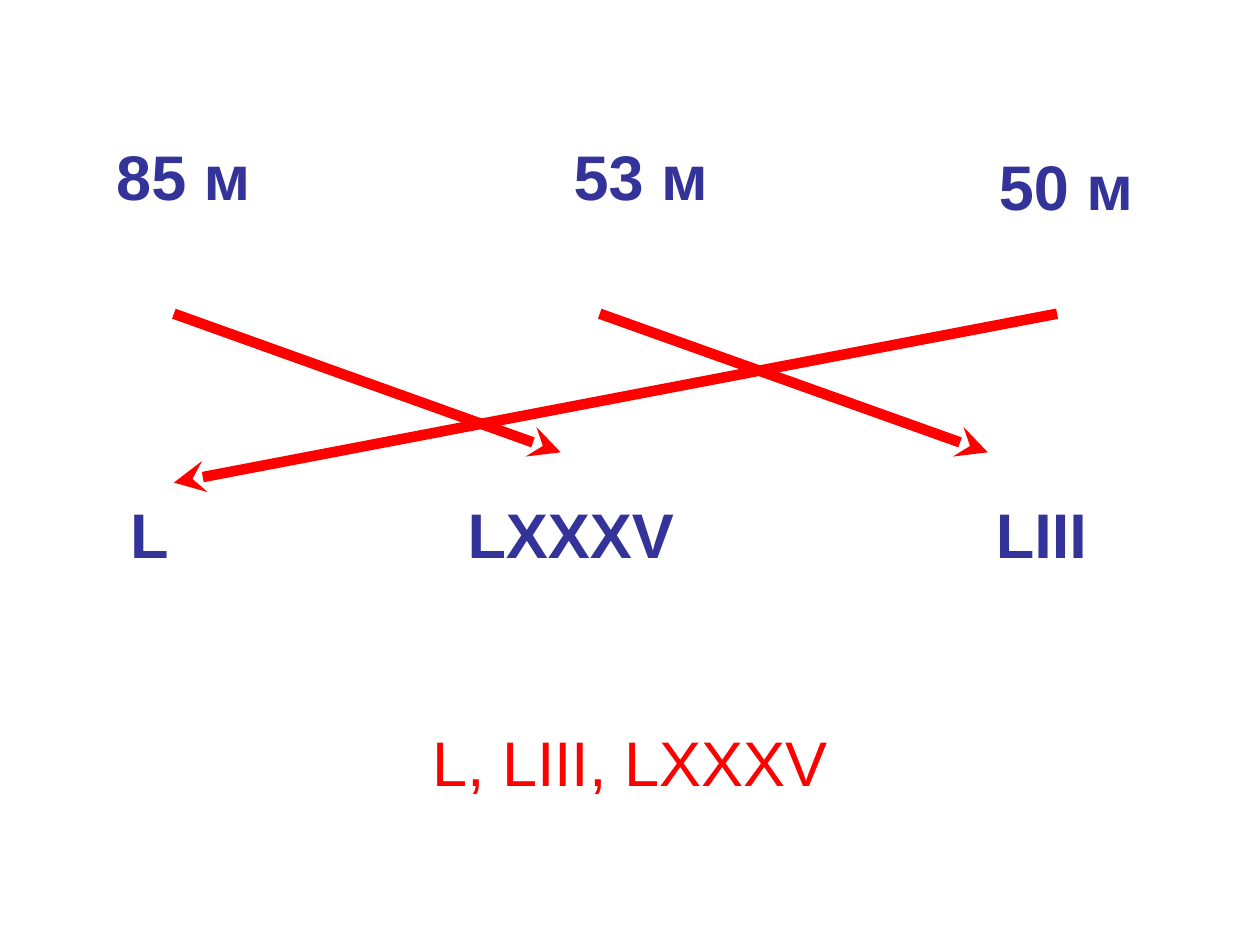
"""Build a slide matching lengths in metres to their Roman numerals."""
from lxml.etree import SubElement
from pptx import Presentation
from pptx.dml.color import RGBColor
from pptx.enum.shapes import MSO_CONNECTOR
from pptx.enum.text import MSO_ANCHOR, PP_ALIGN
from pptx.oxml.ns import qn
from pptx.util import Inches, Pt

INDIGO = RGBColor(0x33, 0x33, 0x99)
RED = RGBColor(0xFF, 0x00, 0x00)

presentation = Presentation()
presentation.slide_width = Inches(10)
presentation.slide_height = Inches(7.5)
slide = presentation.slides.add_slide(presentation.slide_layouts[6])

LENGTH_TOP, NUMERAL_TOP, ANSWER_TOP = 0.99, 3.83, 5.64
labels = [
    ("85 м", 0.43, LENGTH_TOP, 2.05, 1.26, INDIGO, True),
    ("53 м", 4.06, LENGTH_TOP, 2.05, 1.26, INDIGO, True),
    ("50 м", 7.36, LENGTH_TOP + 0.08, 2.2, 1.18, INDIGO, True),
    ("L", 0.75, NUMERAL_TOP, 0.87, 1.42, INDIGO, True),
    ("LXXXV", 3.27, NUMERAL_TOP, 2.52, 1.42, INDIGO, True),
    ("LIII", 7.44, NUMERAL_TOP, 1.65, 1.42, INDIGO, True),
    ("L, LIII, LXXXV", 1.06, ANSWER_TOP, 7.88, 1.18, RED, False),
]
for text, left, top, width, height, color, bold in labels:
    shape = slide.shapes.add_textbox(Inches(left), Inches(top), Inches(width), Inches(height))
    text_frame = shape.text_frame
    text_frame.word_wrap = False
    text_frame.vertical_anchor = MSO_ANCHOR.TOP
    text_frame.margin_top = Inches(0.1)
    text_frame.text = text
    paragraph = text_frame.paragraphs[0]
    paragraph.alignment = PP_ALIGN.CENTER
    font = paragraph.runs[0].font
    font.name = "Arial"
    font.size = Pt(36)
    font.bold = bold
    font.color.rgb = color

ARROW_TOP = 2.49
arrows = [(1.38, 4.45, 3.59), (8.39, 1.38, NUMERAL_TOP), (4.76, 7.84, 3.59)]
for start_x, end_x, end_y in arrows:
    arrow = slide.shapes.add_connector(
        MSO_CONNECTOR.STRAIGHT,
        Inches(start_x), Inches(ARROW_TOP), Inches(end_x), Inches(end_y),
    )
    arrow.line.color.rgb = RED
    arrow.line.width = Pt(6)
    SubElement(arrow.line._get_or_add_ln(), qn("a:tailEnd"), type="stealth")
    SubElement(arrow._element.spPr, qn("a:effectLst"))

presentation.save("out.pptx")
